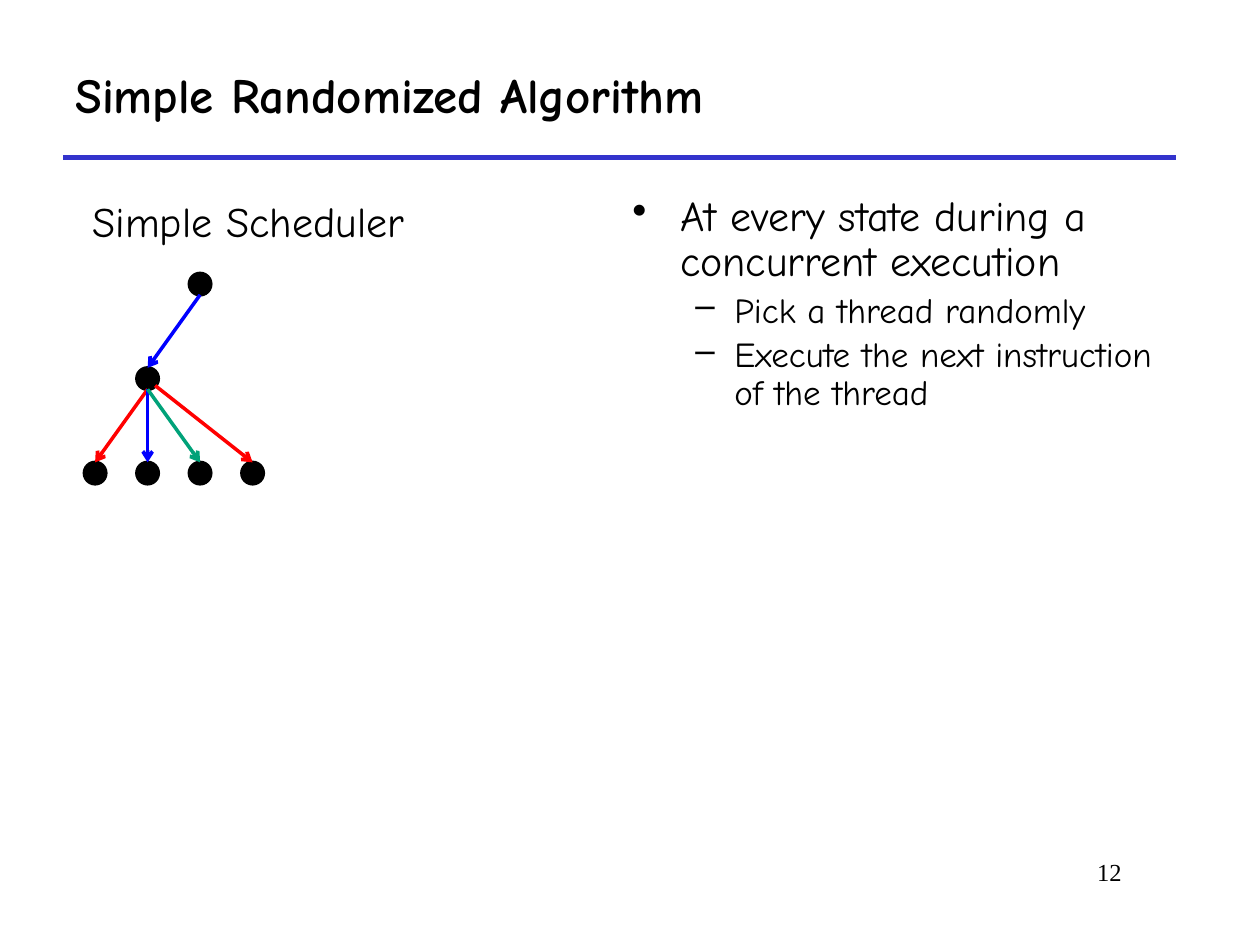
from lxml import etree
from pptx import Presentation
from pptx import util as u
from pptx.dml import color
from pptx.enum import shapes, text
from pptx.oxml import ns

Inches, Pt = u.Inches, u.Pt
COLORS = {"black": "000000", "rule": "3333CC", "blue": "0000FF",
          "red": "FF0000", "green": "00A279"}
FONT = "Comic Neue"
NODE_SIZE = 0.17


def rgb(name):
    """Return the named palette colour."""
    return color.RGBColor.from_string(COLORS[name])


def add_child(parent, tag, **attributes):
    """Append a DrawingML element to a parent element."""
    return etree.SubElement(parent, ns.qn(tag), attributes)


def write_text(paragraph, content, size=24, font=FONT, bold=False, align="LEFT",
               before=0, spacing=None, bullet=None, margin=0, hanging=0, level=0):
    """Write one formatted run and set the paragraph's layout."""
    run = paragraph.add_run()
    run.text = content
    run.font.size, run.font.name, run.font.bold = Pt(size), font, bold
    run.font.color.rgb = rgb("black")
    paragraph.alignment = getattr(text.PP_ALIGN, align)
    paragraph.space_before = Pt(before)
    paragraph.level = level
    if spacing:
        paragraph.line_spacing = spacing
    if bullet:
        properties = paragraph._p.get_or_add_pPr()
        properties.set("marL", str(Inches(margin)))
        properties.set("indent", str(-Inches(hanging)))
        add_child(properties, "a:buChar", char=bullet)


def add_text_frame(slide, box, wrap=True, anchor="TOP"):
    """Add a text box and return its frame."""
    frame = slide.shapes.add_textbox(*map(Inches, box)).text_frame
    frame.word_wrap = wrap
    frame.vertical_anchor = getattr(text.MSO_ANCHOR, anchor)
    return frame


def add_line(slide, start, end, hue, width=2, arrow=False):
    """Add a straight line, optionally with an open arrowhead at its end."""
    connector = slide.shapes.add_connector(
        shapes.MSO_CONNECTOR.STRAIGHT, *map(Inches, (*start, *end)))
    connector.line.color.rgb = rgb(hue)
    connector.line.width = Pt(width)
    if arrow:
        add_child(connector.line._get_or_add_ln(), "a:tailEnd", type="arrow")
    add_child(connector._element.spPr, "a:effectLst")


def add_node(slide, left, top):
    """Add one black state node."""
    node = slide.shapes.add_shape(
        shapes.MSO_SHAPE.OVAL, *map(Inches, (left, top, NODE_SIZE, NODE_SIZE)))
    node.shadow.inherit = False
    node.fill.solid()
    node.fill.fore_color.rgb = rgb("black")
    node.line.color.rgb = rgb("black")
    node.line.width = Pt(2)


def add_header(slide, left, top, width, height):
    """Place the title and the rule below it."""
    rule_top = 1.25
    add_line(slide, (left, rule_top), (left + width, rule_top), "rule", 3)
    frame = add_text_frame(slide, (left, top, width, height), anchor="MIDDLE")
    write_text(frame.paragraphs[0], "Simple Randomized Algorithm", size=28, bold=True)


def add_scheduler_tree(slide, left, top):
    """Place the three-level tree of scheduler choices."""
    columns = [left + index * 1.25 / 3 for index in range(4)]
    levels = [top + index * 0.75 for index in range(3)]
    centers = [column + NODE_SIZE / 2 for column in columns]
    nodes = [(2, 0), (1, 1)] + [(index, 2) for index in range(4)]
    for column, level in nodes:
        add_node(slide, columns[column], levels[level])
    root_bottom, branch_bottom = [level + NODE_SIZE for level in levels[:2]]
    branch = (centers[1], branch_bottom)
    add_line(slide, (centers[2], root_bottom), (centers[1], levels[1]), "blue", arrow=True)
    starts = [branch, branch, branch, (centers[1] + 0.06, branch_bottom - 0.03)]
    for index in (3, 0, 1, 2):
        hue = ("red", "blue", "green", "red")[index]
        add_line(slide, starts[index], (centers[index], levels[2]), hue, arrow=True)


def add_scheduler(slide, left, top, width, height):
    """Place the scheduler heading and its tree."""
    frame = add_text_frame(slide, (left, top, width, height), wrap=False)
    frame.auto_size = text.MSO_AUTO_SIZE.SHAPE_TO_FIT_TEXT
    write_text(frame.paragraphs[0], "Simple Scheduler", align="CENTER", before=4.8)
    add_scheduler_tree(slide, left + 0.17, top + 0.67)


def add_steps(slide, left, top, width, height):
    """Place the bulleted description of the algorithm."""
    frame = add_text_frame(slide, (left, top, width, height))
    write_text(frame.paragraphs[0], "At every state during a concurrent execution",
               before=4.8, spacing=0.9, bullet="•", margin=0.38, hanging=0.38)
    for step in ("Pick a thread randomly", "Execute the next instruction of the thread"):
        write_text(frame.add_paragraph(), step, size=20, before=4, spacing=0.9,
                   bullet="–", margin=0.81, hanging=0.31, level=1)


def add_page_number(slide, left, top, width, height):
    """Place the page number."""
    frame = add_text_frame(slide, (left, top, width, height))
    write_text(frame.paragraphs[0], "12", size=14, font="Times New Roman", align="RIGHT")


def main():
    """Build and save the presentation."""
    presentation = Presentation()
    presentation.slide_width, presentation.slide_height = Inches(10), Inches(7.5)
    slide = presentation.slides.add_slide(presentation.slide_layouts[6])
    add_header(slide, 0.5, 0.33, 8.83, 0.83)
    add_page_number(slide, 6.92, 6.75, 2.08, 0.5)
    add_scheduler(slide, 0.5, 1.5, 2.94, 0.51)
    add_steps(slide, 4.92, 1.5, 4.42, 5.17)
    presentation.save("out.pptx")


if __name__ == "__main__":
    main()
